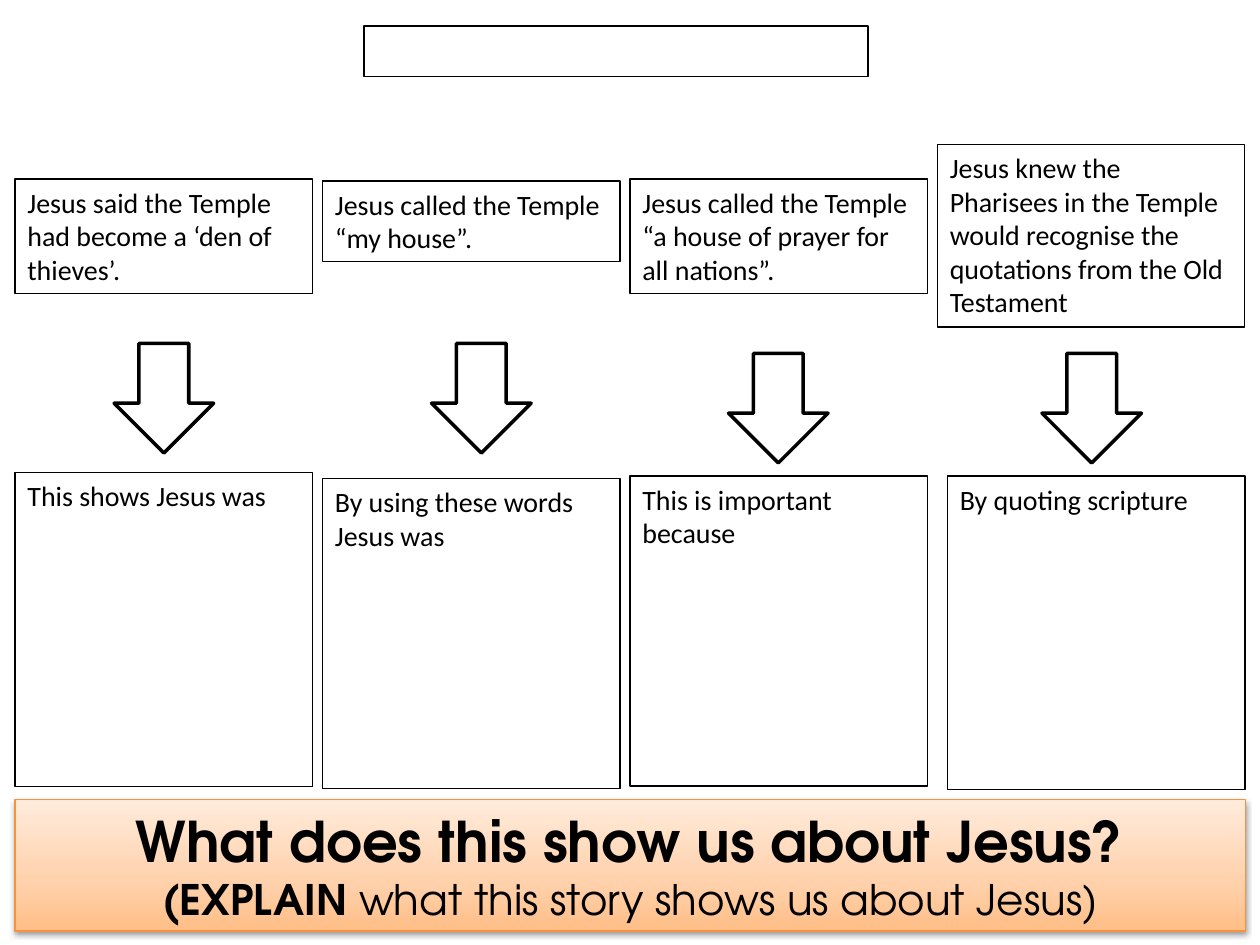
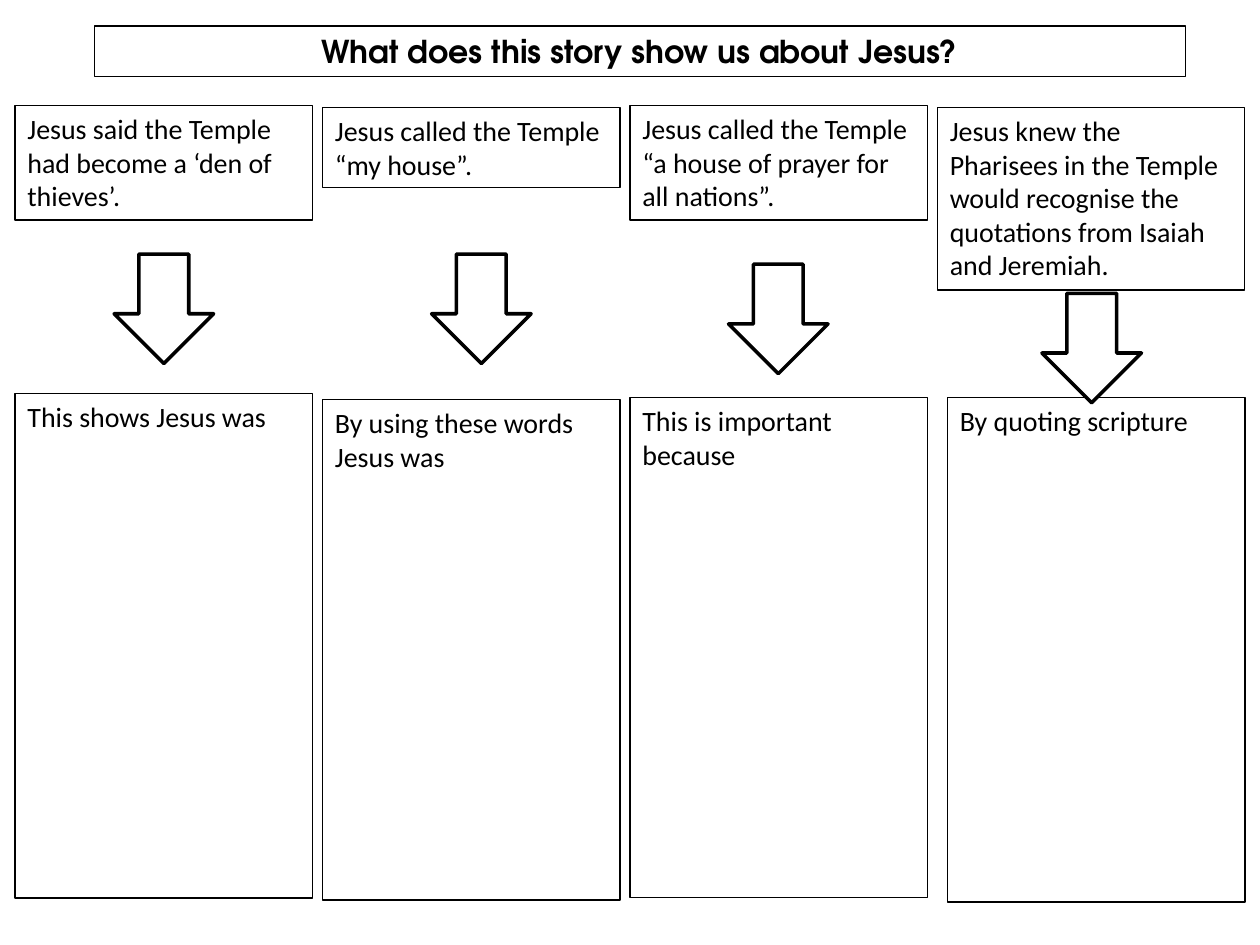
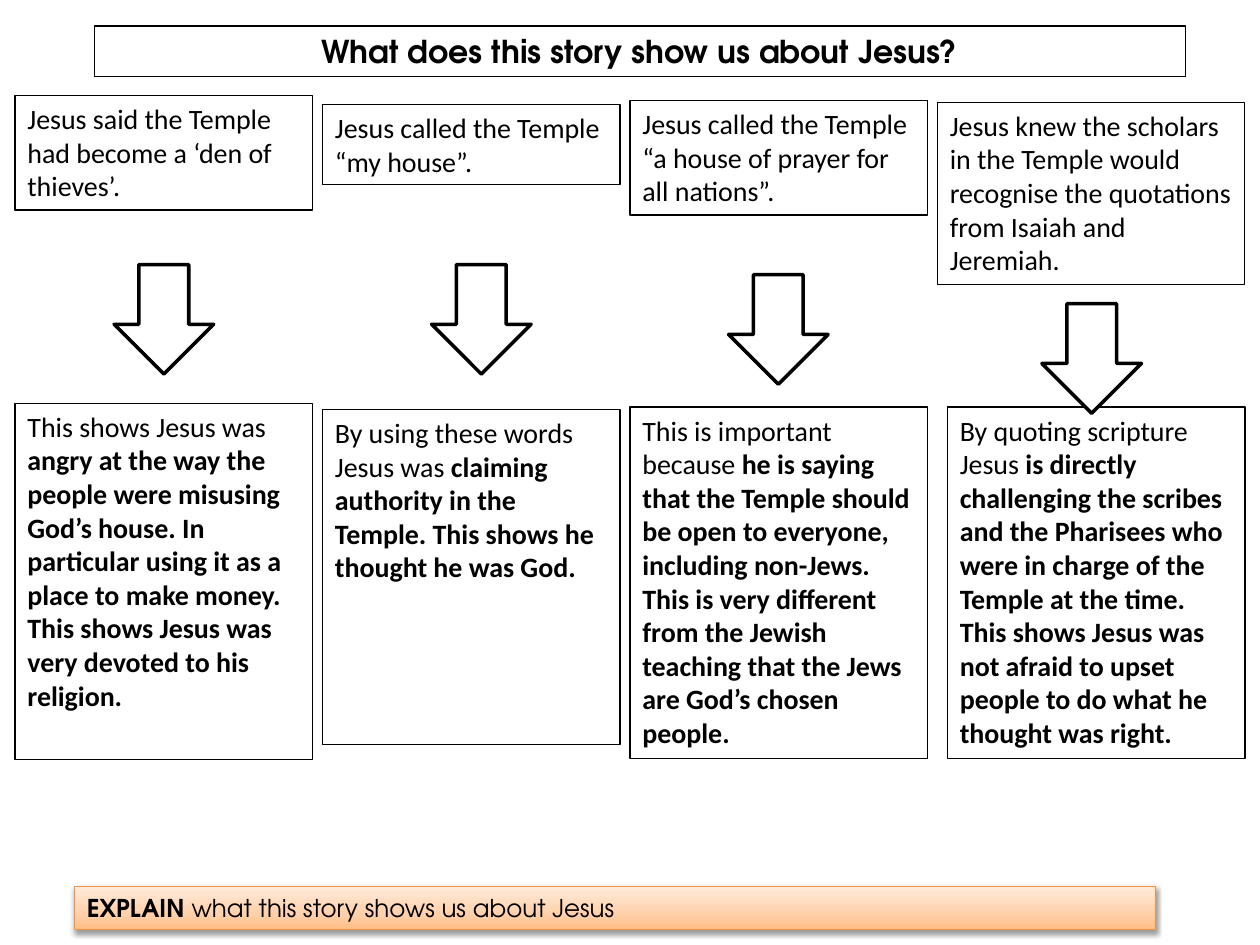
from dataclasses import dataclass

from lxml import etree
from pptx import Presentation
from pptx import util as u
from pptx.dml.color import RGBColor
from pptx.enum import shapes, text
from pptx.oxml.ns import qn


@dataclass(frozen=True)
class Theme:
    ink: str = "000000"
    paper: str = "FFFFFF"
    band_edge: str = "F69240"
    band_stops: tuple = ((0, "FFBE86"), (35, "FFD0AA"), (100, "FFEBDB"))
    body_font: str = "Calibri"
    display_font: str = "TeX Gyre Adventor"
    body_size: float = 16
    title_size: float = 18
    footer_size: float = 14
    question_size: float = 32
    task_size: float = 24
    thin: float = 0.75
    thick: float = 2


THEME = Theme()
TITLE = "What does this story show us about Jesus?"

# Four columns shared by every slide, in points
COLUMN_LEFT, COLUMN_STEP, BOX_WIDTH = 8.6, 175.7, 170
COLUMN_LEFTS = [COLUMN_LEFT + COLUMN_STEP * i for i in range(4)]
STATEMENT_WIDTHS = (BOX_WIDTH, BOX_WIDTH, BOX_WIDTH, COLUMN_STEP)
STATEMENT_HEIGHTS = (65.5, 46, 65.5, 104.4)
ANSWER_LEFTS = COLUMN_LEFTS[:3] + [COLUMN_LEFTS[3] + COLUMN_STEP - BOX_WIDTH]
ARROW_LEFTS = (65.2, 246.6, 416.3, 595.4)
ARROW_SIZE = (56.9, 62.6)

STATEMENTS = (
    "Jesus said the Temple had become a ‘den of thieves’.",
    "Jesus called the Temple “my house”.",
    "Jesus called the Temple “a house of prayer for all nations”.",
)
STARTERS = (
    "This shows Jesus was",
    "By using these words Jesus was",
    "This is important because",
    "By quoting scripture",
)
MODEL_ANSWERS = (
    "angry at the way the people were misusing God’s house. In particular "
    "using it as a place to make money. This shows Jesus was very devoted "
    "to his religion.",
    "claiming authority in the Temple. This shows he thought he was God.",
    "he is saying that the Temple should be open to everyone, including "
    "non-Jews. This is very different from the Jewish teaching that the "
    "Jews are God’s chosen people.",
    "is directly challenging the scribes and the Pharisees who were in "
    "charge of the Temple at the time. This shows Jesus was not afraid to "
    "upset people to do what he thought was right.",
)


@dataclass(frozen=True)
class Worksheet:
    last_statement: str
    statement_tops: tuple
    arrow_tops: tuple
    answer_tops: tuple
    answer_heights: tuple
    answers: tuple  # one list of (text, bold) runs per column


BLANK_ANSWERS = tuple([(starter, False)] for starter in STARTERS)
FULL_STARTERS = STARTERS[:3] + (STARTERS[3] + " Jesus",)
FULL_ANSWERS = tuple(
    [(starter + " ", False), (answer, True)]
    for starter, answer in zip(FULL_STARTERS, MODEL_ANSWERS)
)

TASK = Worksheet(
    "Jesus knew the Pharisees in the Temple would recognise the quotations "
    "from the Old Testament",
    (102.3, 103.5, 102.3, 82.5), (196.3, 196.3, 202, 202),
    (270, 273.5, 272, 272), (179.3, 177.1, 177.1, 179.3), BLANK_ANSWERS,
)
HANDOUT = Worksheet(
    "Jesus knew the Pharisees in the Temple would recognise the quotations "
    "from Isaiah and Jeremiah.",
    (60.2, 61.3, 60.2, 61.3), (145.2, 145.2, 151, 167.6),
    (224.7, 228.4, 227, 227), (288.5, 286, 286, 288.5), BLANK_ANSWERS,
)
MODEL = Worksheet(
    "Jesus knew the scholars in the Temple would recognise the quotations "
    "from Isaiah and Jeremiah.",
    (54.5, 59.6, 57.4, 58.4), (151.2, 151.2, 157, 173.6),
    (230.4, 234, 232.6, 232.6), (203.5, 191.5, 201, 201), FULL_ANSWERS,
)


def place(shape, left, top, width, height):
    shape.left, shape.top = u.Pt(left), u.Pt(top)
    shape.width, shape.height = u.Pt(width), u.Pt(height)


def outline(shape, color=THEME.ink, width=THEME.thin):
    shape.line.color.rgb = RGBColor.from_string(color)
    shape.line.width = u.Pt(width)


def write(shape, lines, font, align=text.PP_ALIGN.LEFT):
    """Fill a shape with lines, each a size and its (text, bold) runs."""
    frame = shape.text_frame
    frame.word_wrap = True
    frame.auto_size = text.MSO_AUTO_SIZE.NONE
    frame.vertical_anchor = text.MSO_ANCHOR.TOP
    for index, (size, runs) in enumerate(lines):
        paragraph = frame.add_paragraph() if index else frame.paragraphs[0]
        paragraph.alignment = align
        for words, bold in runs:
            run = paragraph.add_run()
            run.text = words
            run.font.name, run.font.size, run.font.bold = font, u.Pt(size), bold
            run.font.color.rgb = RGBColor.from_string(THEME.ink)


def add_box(slide, left, top, width, height, runs):
    box = slide.shapes.add_textbox(*map(u.Pt, (left, top, width, height)))
    outline(box)
    write(box, [(THEME.body_size, runs)], THEME.body_font)


def add_arrow(slide, left, top):
    arrow = slide.shapes.add_shape(
        shapes.MSO_SHAPE.DOWN_ARROW, *map(u.Pt, (left, top, *ARROW_SIZE)))
    arrow.shadow.inherit = False
    arrow.fill.solid()
    arrow.fill.fore_color.rgb = RGBColor.from_string(THEME.paper)
    outline(arrow, width=THEME.thick)


def add_color(parent, value):
    return etree.SubElement(parent, qn("a:srgbClr"), val=value)


def style_band(shape):
    """Give a shape the orange gradient, edge and soft shadow."""
    shape.fill.gradient()
    shape.fill.gradient_angle = 90
    properties = shape.element.spPr
    stops = properties.find(".//" + qn("a:gsLst"))
    stops[:] = []
    for percent, color in THEME.band_stops:
        stop = etree.SubElement(stops, qn("a:gs"), pos=str(percent * 1000))
        add_color(stop, color)
    outline(shape, THEME.band_edge)
    shape.shadow.inherit = False
    shadow = etree.SubElement(
        properties.find(qn("a:effectLst")), qn("a:outerShdw"),
        blurRad=str(u.Pt(3.1)), dist=str(u.Pt(1.6)), dir="5400000",
        rotWithShape="0")
    etree.SubElement(add_color(shadow, THEME.ink), qn("a:alpha"), val="38000")


def add_title(slide):
    title = slide.shapes.title
    place(title, 53.8, 14.8, 623.5, 29)
    outline(title)
    write(title, [(THEME.title_size, [(TITLE, True)])], THEME.display_font,
          text.PP_ALIGN.CENTER)


def add_question_title(slide):
    title = slide.shapes.title
    place(title, COLUMN_LEFT, 457, 703, 75)
    style_band(title)
    lines = [
        (THEME.question_size, [("What does this show us about Jesus?", True)]),
        (THEME.task_size, [("(EXPLAIN ", True),
                           ("what this story shows us about Jesus)", False)]),
    ]
    write(title, lines, THEME.display_font, text.PP_ALIGN.CENTER)


def add_empty_frame(slide):
    frame = slide.shapes.add_shape(
        shapes.MSO_SHAPE.RECTANGLE, *map(u.Pt, (208, 14.8, 288, 29)))
    frame.shadow.inherit = False
    frame.fill.background()
    outline(frame)


def add_footer(slide):
    footer = slide.shapes.add_shape(
        shapes.MSO_SHAPE.RECTANGLE, *map(u.Pt, (42.5, 506.6, 617.8, 24.5)))
    style_band(footer)
    runs = [("EXPLAIN ", True), ("what this story shows us about Jesus", False)]
    write(footer, [(THEME.footer_size, runs)], THEME.display_font)


def add_worksheet(slide, sheet):
    """Draw the statements, the answers below them and the arrows between."""
    statements = STATEMENTS + (sheet.last_statement,)
    for column in range(4):
        add_box(slide, COLUMN_LEFTS[column], sheet.statement_tops[column],
                STATEMENT_WIDTHS[column], STATEMENT_HEIGHTS[column],
                [(statements[column], False)])
        add_box(slide, ANSWER_LEFTS[column], sheet.answer_tops[column],
                BOX_WIDTH, sheet.answer_heights[column], sheet.answers[column])
        add_arrow(slide, ARROW_LEFTS[column], sheet.arrow_tops[column])


def main():
    presentation = Presentation()
    presentation.slide_width, presentation.slide_height = u.Pt(720), u.Pt(540)
    title_only = presentation.slide_layouts.get_by_name("Title Only")

    # Task with the question at the foot
    slide = presentation.slides.add_slide(title_only)
    add_question_title(slide)
    add_empty_frame(slide)
    add_worksheet(slide, TASK)

    # Handout with room to write
    slide = presentation.slides.add_slide(title_only)
    add_title(slide)
    add_worksheet(slide, HANDOUT)

    # Model answers
    slide = presentation.slides.add_slide(title_only)
    add_title(slide)
    add_worksheet(slide, MODEL)
    add_footer(slide)

    presentation.save("out.pptx")


if __name__ == "__main__":
    main()
